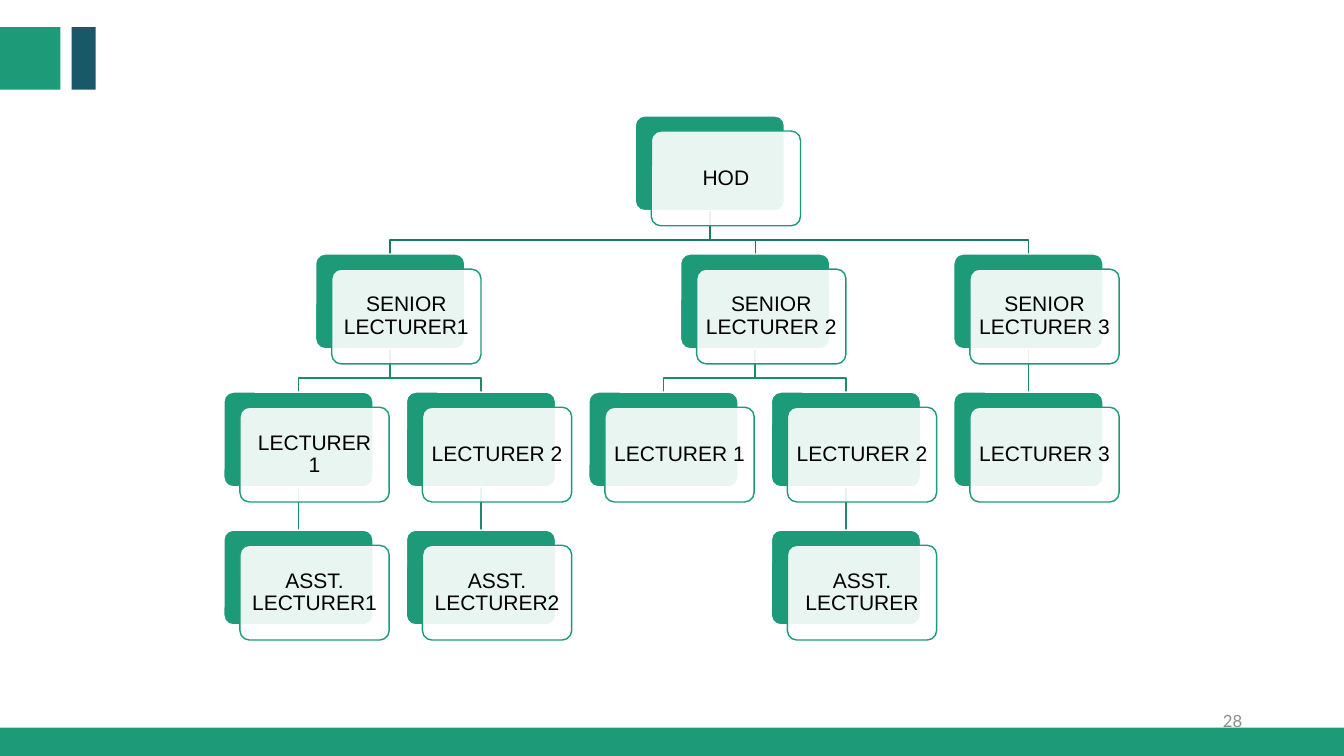
from lxml import etree
from pptx import Presentation
from pptx import util as u
from pptx.dml.color import RGBColor
from pptx.enum import shapes, text
from pptx.oxml import ns

GREEN = RGBColor(0x1D, 0x9A, 0x78)
TEAL = RGBColor(0x19, 0x58, 0x69)
TOP_LINK = RGBColor(0x17, 0x7B, 0x60)
LOWER_LINK = RGBColor(0x1A, 0x8C, 0x6D)
WHITE = RGBColor(0xFF, 0xFF, 0xFF)
BLACK = RGBColor(0, 0, 0)
GREY = RGBColor(0x8C, 0x8C, 0x8C)

PX = u.Inches(1) // 100
CARD_WIDTH, CARD_HEIGHT = 148, 94
COLUMN_STEP, ROW_STEP = 181, 137
CHART_LEFT, CHART_TOP = 222, 115
FRONT_X, FRONT_Y = 16, 15
BEND = 29

# Each post is (label, posts below it); "\n" is a line break.
STAFF = ("HOD", [
    ("SENIOR LECTURER1", [
        ("LECTURER\n1", [("ASST. LECTURER1", [])]),
        ("LECTURER 2", [("ASST. LECTURER2", [])]),
    ]),
    ("SENIOR LECTURER 2", [
        ("LECTURER 1", []),
        ("LECTURER 2", [("ASST. LECTURER", [])]),
    ]),
    ("SENIOR LECTURER 3", [("LECTURER 3", [])]),
])


class Painter:
    def __init__(self, page):
        self.page = page
        self.font = "Arial"
        self.size = 15

    def block(self, left, top, width, height, fill, line=None,
              kind=shapes.MSO_SHAPE.RECTANGLE):
        box = self.page.shapes.add_shape(
            kind, left * PX, top * PX, width * PX, height * PX)
        box.shadow.inherit = False
        box.fill.solid()
        box.fill.fore_color.rgb = fill
        if line is None:
            box.line.fill.background()
        else:
            box.line.color.rgb = line
            box.line.width = u.Pt(1)
        return box

    def add_words(self, box, words, align, color, font=None, size=None):
        frame = box.text_frame
        frame.word_wrap = True
        frame.vertical_anchor = text.MSO_ANCHOR.MIDDLE
        para = frame.paragraphs[0]
        para.alignment = align
        for index, words_on_line in enumerate(words.split("\n")):
            if index:
                para.add_line_break()
            span = para.add_run()
            span.text = words_on_line
            span.font.name = font or self.font
            span.font.size = u.Pt(size or self.size)
            span.font.color.rgb = color
        return para

    def label(self, left, top, width, height, words, **style):
        box = self.page.shapes.add_textbox(
            left * PX, top * PX, width * PX, height * PX)
        self.add_words(box, words, **style)

    def card(self, left, top, words):
        """Draw a green card with a translucent labelled card over it."""
        rounded = shapes.MSO_SHAPE.ROUNDED_RECTANGLE
        back = self.block(left, top, CARD_WIDTH, CARD_HEIGHT, GREEN, WHITE, rounded)
        front = self.block(left + FRONT_X, top + FRONT_Y, CARD_WIDTH, CARD_HEIGHT,
                           WHITE, GREEN, rounded)
        for box in (back, front):
            box.adjustments[0] = 0.1
        tint = front.element.spPr.find(ns.qn("a:solidFill"))[0]
        etree.SubElement(tint, ns.qn("a:alpha"), val="90000")
        frame = front.text_frame
        frame.margin_left = frame.margin_right = 5 * PX
        frame.margin_top = frame.margin_bottom = 5 * PX
        para = self.add_words(front, words, text.PP_ALIGN.CENTER, BLACK)
        para.line_spacing = 0.9

    def link(self, start, end, color):
        """Join two points, bending when they are not in one column."""
        (x1, y1), (x2, y2) = start, end
        if x1 == x2:
            line = self.page.shapes.add_connector(
                shapes.MSO_CONNECTOR.STRAIGHT, x1 * PX, y1 * PX, x2 * PX, y2 * PX)
            etree.SubElement(line.element.spPr, ns.qn("a:effectLst"))
        else:
            builder = self.page.shapes.build_freeform(x1, y1, scale=PX)
            builder.add_line_segments(
                [(x1, y1 + BEND), (x2, y1 + BEND), end], close=False)
            line = builder.convert_to_shape()
            line.shadow.inherit = False
            line.fill.background()
        line.line.color.rgb = color
        line.line.width = u.Pt(1)


def arrange(post, cards, links, level=0, column=0):
    """Place a post over its juniors; return its left edge and the next free column."""
    words, juniors = post
    top = CHART_TOP + level * ROW_STEP
    lefts = []
    for junior in juniors:
        junior_left, column = arrange(junior, cards, links, level + 1, column)
        lefts.append(junior_left)
    if lefts:
        left = (lefts[0] + lefts[-1] + 1) // 2
    else:
        left = CHART_LEFT + column * COLUMN_STEP
        column += 1
    middle = CARD_WIDTH // 2
    for junior_left in lefts:
        links.append(((left + middle, top + CARD_HEIGHT),
                      (junior_left + middle, top + ROW_STEP),
                      LOWER_LINK if level else TOP_LINK))
    cards.append((left, top, words))
    return left, column


def main():
    deck = Presentation()
    deck.slide_width, deck.slide_height = 1333 * PX, 750 * PX
    painter = Painter(deck.slides.add_slide(deck.slide_layouts[6]))

    painter.label(942, 695, 300, 40, "28", align=text.PP_ALIGN.RIGHT,
                  color=GREY, font="Lato", size=12)
    painter.block(0, 27, 60, 62, GREEN)
    painter.block(71, 27, 24, 62, TEAL)
    painter.block(0, 722, 1333, 30, GREEN)

    cards, links = [], []
    arrange(STAFF, cards, links)
    for link in links:
        painter.link(*link)
    for card in cards:
        painter.card(*card)

    deck.save("out.pptx")


if __name__ == "__main__":
    main()
